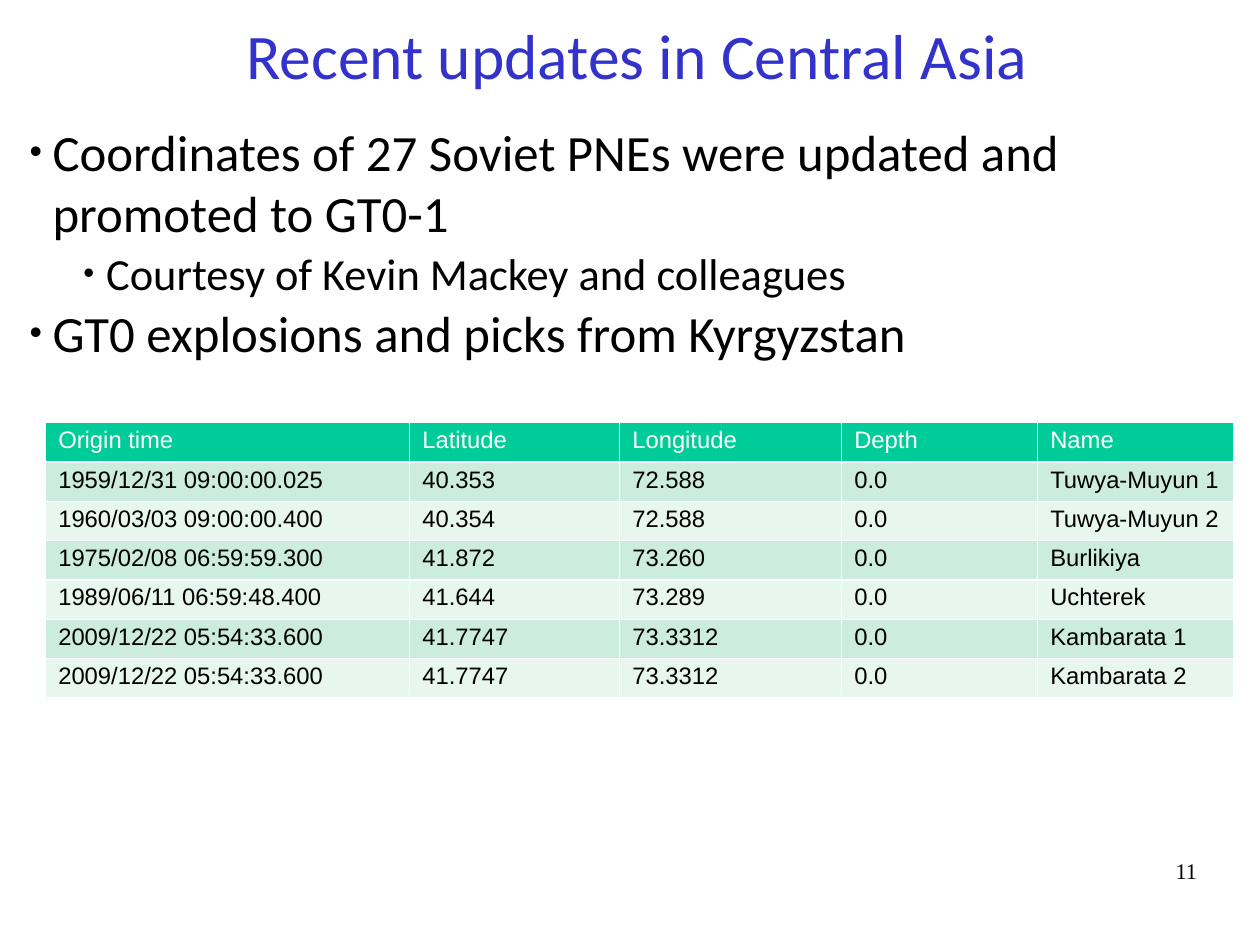
import pptx
import pptx.util
import pptx.dml.color
import pptx.enum.text
import pptx.oxml
import pptx.oxml.ns
from lxml import etree

RGBColor = pptx.dml.color.RGBColor
Pt = pptx.util.Pt
Align = pptx.enum.text.PP_ALIGN
Anchor = pptx.enum.text.MSO_ANCHOR

WIDTH = pptx.util.Cm(28)
HEIGHT = pptx.util.Cm(21)

BLACK = RGBColor(0x00, 0x00, 0x00)
WHITE = RGBColor(0xFF, 0xFF, 0xFF)
TITLE_BLUE = RGBColor(0x33, 0x33, 0xCC)
HEADER_GREEN = RGBColor(0x00, 0xCC, 0x99)
BAND_GREENS = RGBColor(0xE7, 0xF6, 0xEF), RGBColor(0xCC, 0xEC, 0xDE)

POINTS = [
    (0, "Coordinates of 27 Soviet PNEs were updated and promoted to GT0-1"),
    (1, "Courtesy of Kevin Mackey and colleagues"),
    (0, "GT0 explosions and picks from Kyrgyzstan"),
]
POINT_SIZES = 32, 28
POINT_INDENTS = 0.29, 0.76

EXPLOSIONS = [
    ("Origin time", "Latitude", "Longitude", "Depth", "Name"),
    ("1959/12/31 09:00:00.025", "40.353", "72.588", "0.0", "Tuwya-Muyun 1"),
    ("1960/03/03 09:00:00.400", "40.354", "72.588", "0.0", "Tuwya-Muyun 2"),
    ("1975/02/08 06:59:59.300", "41.872", "73.260", "0.0", "Burlikiya"),
    ("1989/06/11 06:59:48.400", "41.644", "73.289", "0.0", "Uchterek"),
    ("2009/12/22 05:54:33.600", "41.7747", "73.3312", "0.0", "Kambarata 1"),
    ("2009/12/22 05:54:33.600", "41.7747", "73.3312", "0.0", "Kambarata 2"),
]
COLUMN_PERCENTS = 28.89, 16.67, 17.62, 15.56, 15.56
ROW_PERCENT = 4.16


def across(percent):
    """Length as a percentage of the slide's width."""
    return round(WIDTH * percent / 100)


def down(percent):
    """Length as a percentage of the slide's height."""
    return round(HEIGHT * percent / 100)


def apply_format(target, values):
    for name, value in values.items():
        setattr(target, name, value)


def write(paragraph, text, font, size, color, **layout):
    run = paragraph.add_run()
    run.text = text
    apply_format(run.font, {"name": font, "size": Pt(size)})
    run.font.color.rgb = color
    apply_format(paragraph, layout)


def add_text_frame(slide, left, top, width, height, anchor=Anchor.TOP):
    box = slide.shapes.add_textbox(across(left), down(top), across(width), down(height))
    apply_format(box.text_frame, {
        "word_wrap": True, "vertical_anchor": anchor,
        "margin_left": 0, "margin_top": 0, "margin_right": 0, "margin_bottom": 0,
    })
    return box.text_frame


def add_child(parent, tag, **attributes):
    return etree.SubElement(parent, pptx.oxml.ns.qn(tag), attributes)


def set_bullet(paragraph, indent):
    properties = paragraph._p.get_or_add_pPr()
    properties.set("marL", str(pptx.util.Inches(indent)))
    properties.set("indent", str(pptx.util.Inches(-0.2)))
    add_child(add_child(properties, "a:buClr"), "a:srgbClr", val=str(BLACK))
    add_child(properties, "a:buSzPct", val="70000")
    add_child(properties, "a:buFont", typeface="Arial")
    add_child(properties, "a:buChar", char="•")


def add_points(slide):
    frame = add_text_frame(slide, 1.54, 12.82, 96.82, 28.17)
    for number, (level, text) in enumerate(POINTS):
        paragraph = frame.add_paragraph() if number else frame.paragraphs[0]
        write(paragraph, text, "Calibri", POINT_SIZES[level], BLACK,
              level=level, space_after=Pt(1.6))
        set_bullet(paragraph, POINT_INDENTS[level])


def set_borders(cell):
    properties = cell._tc.get_or_add_tcPr()
    for side in "LRTB":
        line = add_child(properties, f"a:ln{side}", w=str(Pt(1)))
        add_child(add_child(line, "a:solidFill"), "a:srgbClr", val=str(WHITE))


def fill_cell(cell, text, fill, color):
    set_borders(cell)
    cell.fill.solid()
    cell.fill.fore_color.rgb = fill
    side, edge = pptx.util.Inches(0.11), pptx.util.Inches(0.04)
    apply_format(cell, {"margin_left": side, "margin_right": side,
                        "margin_top": edge, "margin_bottom": edge})
    write(cell.text_frame.paragraphs[0], text, "Arial", 15, color)


def add_explosions(slide):
    table = slide.shapes.add_table(
        len(EXPLOSIONS), len(COLUMN_PERCENTS), across(3.63), down(44.74),
        across(sum(COLUMN_PERCENTS)), down(ROW_PERCENT * len(EXPLOSIONS))).table
    table.horz_banding = False
    for column, percent in zip(table.columns, COLUMN_PERCENTS):
        column.width = across(percent)
    for r, explosion in enumerate(EXPLOSIONS):
        table.rows[r].height = down(ROW_PERCENT)
        fill, color = (BAND_GREENS[r % 2], BLACK) if r else (HEADER_GREEN, WHITE)
        for c, text in enumerate(explosion):
            fill_cell(table.cell(r, c), text, fill, color)


def main():
    deck = pptx.Presentation()
    deck.slide_width = WIDTH
    deck.slide_height = HEIGHT
    slide = deck.slides.add_slide(deck.slide_layouts[6])

    page = add_text_frame(slide, 71.69, 90.75, 23.32, 6.89)
    write(page.paragraphs[0], "11", "Times New Roman", 14, BLACK, alignment=Align.RIGHT)
    title = add_text_frame(slide, 5.54, 1.35, 90.02, 9.55, Anchor.MIDDLE)
    write(title.paragraphs[0], "Recent updates in Central Asia", "Calibri", 40,
          TITLE_BLUE, alignment=Align.CENTER, line_spacing=0.93)
    add_points(slide)
    add_explosions(slide)
    deck.save("out.pptx")


if __name__ == "__main__":
    main()
